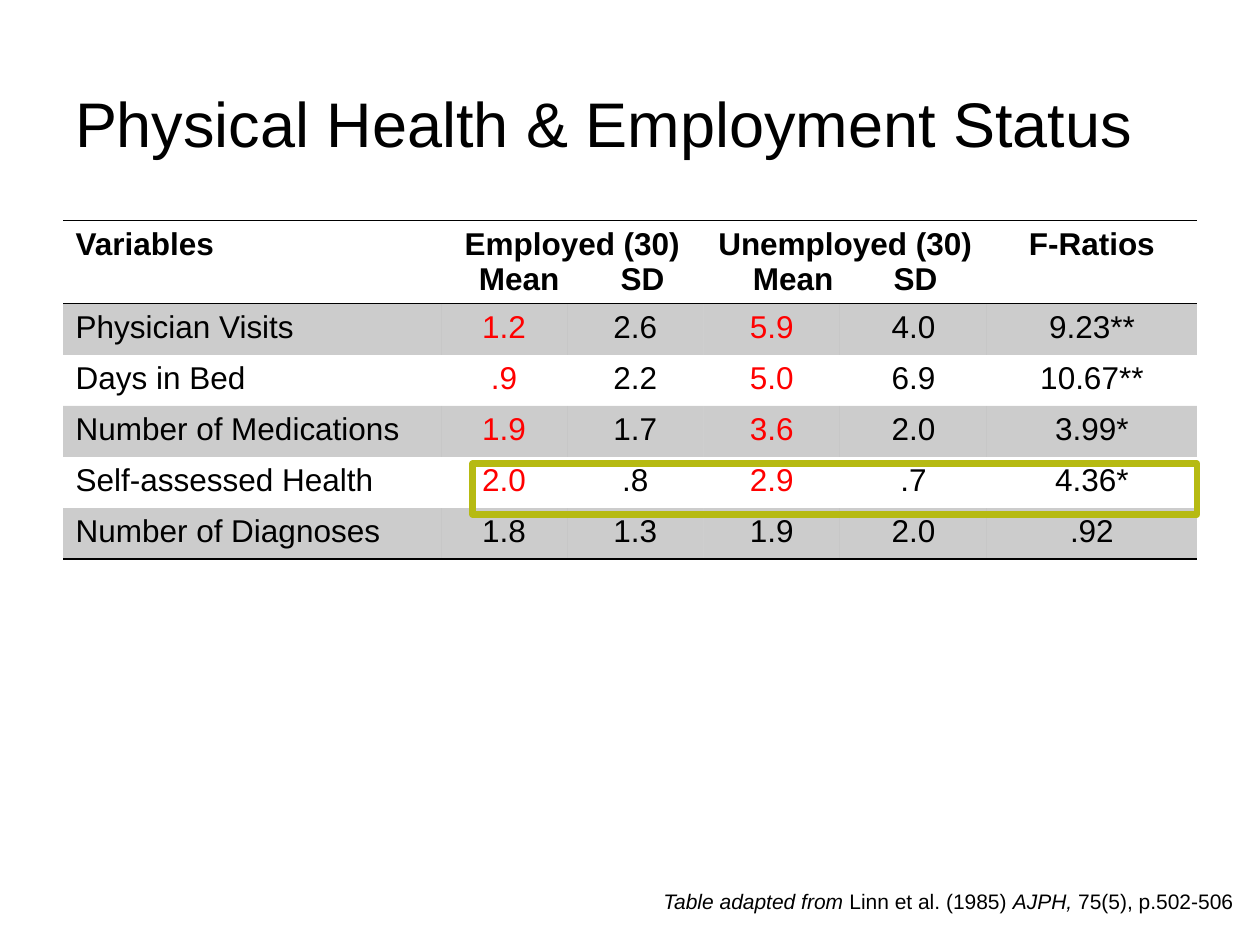
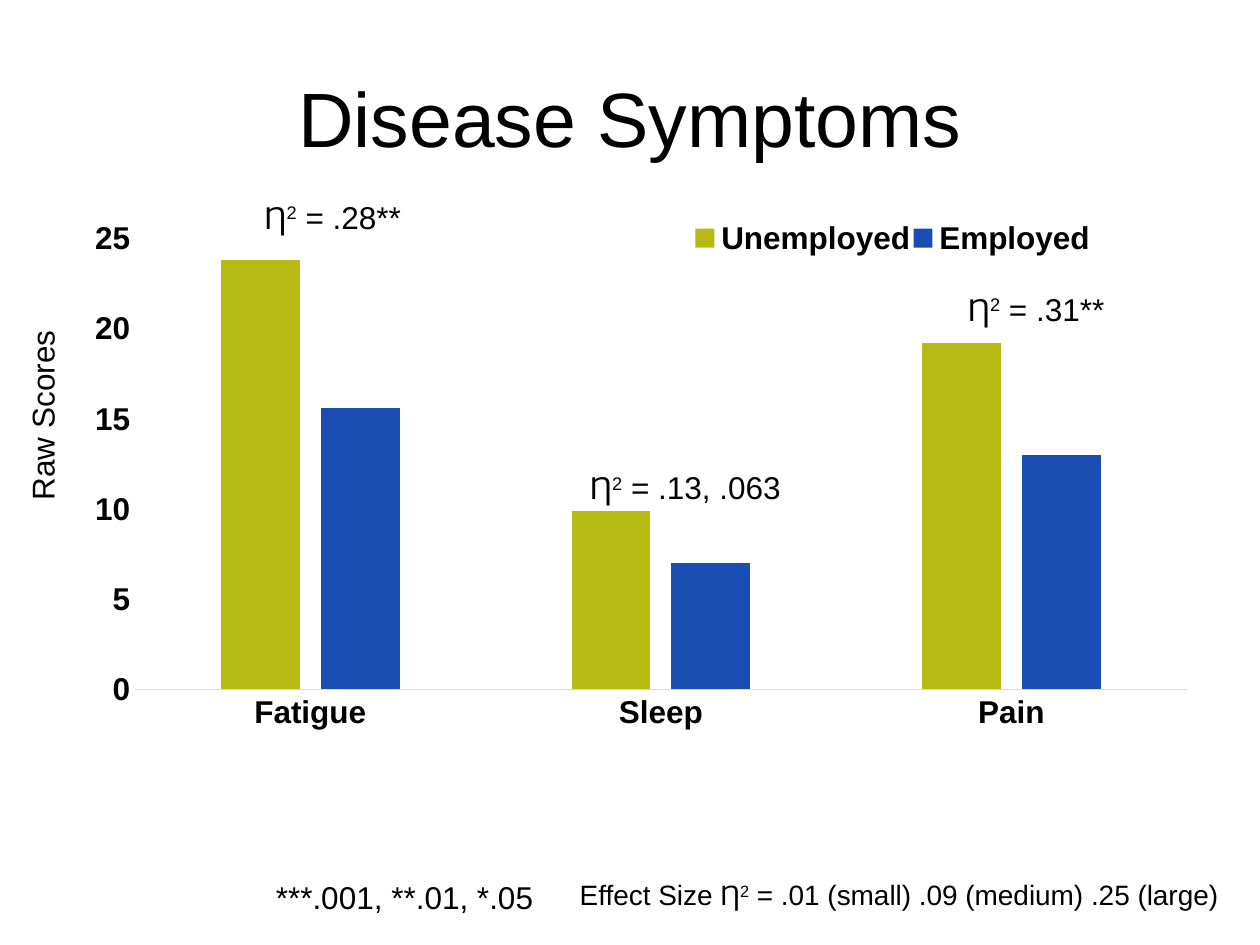
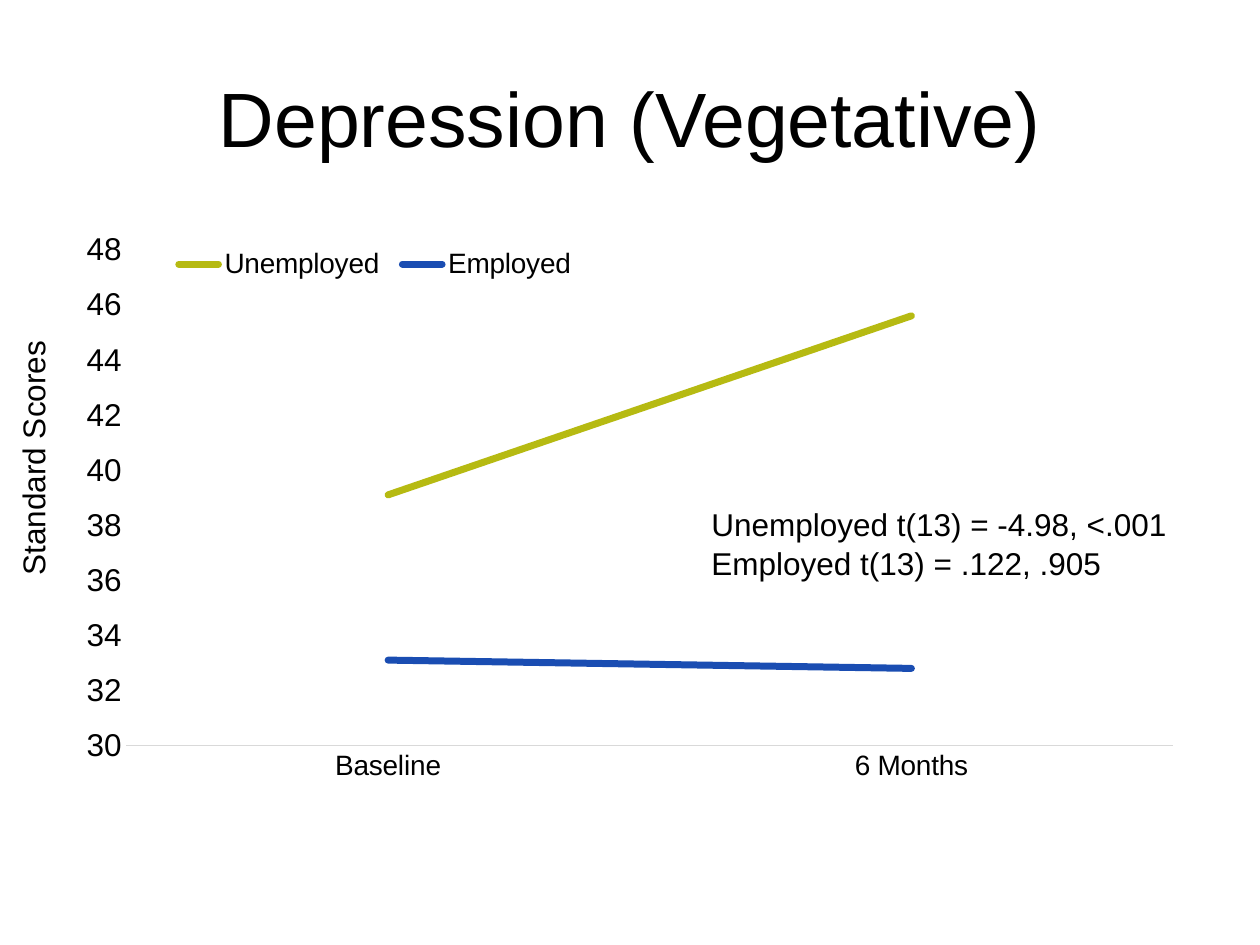
from lxml.etree import SubElement
from pptx import Presentation
from pptx.chart.data import CategoryChartData
from pptx.dml.color import RGBColor
from pptx.enum.chart import XL_CHART_TYPE, XL_LEGEND_POSITION, XL_TICK_MARK
from pptx.enum.shapes import MSO_SHAPE
from pptx.enum.text import MSO_ANCHOR, MSO_AUTO_SIZE, PP_ALIGN
from pptx.oxml.ns import qn
from pptx.util import Pt

FONT = "Arial"
BLACK, RED, OLIVE, BLUE, GREY = "000000", "FF0000", "B6BA12", "1A4DB2", "D9D9D9"
NO_GRID_STYLE = "{2D5ABB26-0587-4C30-8999-92F81FD0307C}"
TITLE_BOX = (36, 21.6, 648, 90)

COLUMNS = [216, 72, 78, 78, 84, 120]
HEADER_HEIGHT, ROW_HEIGHT = 47.5, 29.2
GROUPS = [(1, "Employed (30)", (37.5, 108)), (3, "Unemployed (30)", (44, 114))]
ROWS = [
    ["Physician Visits", "1.2", "2.6", "5.9", "4.0", "9.23**"],
    ["Days in Bed", ".9", "2.2", "5.0", "6.9", "10.67**"],
    ["Number of Medications", "1.9", "1.7", "3.6", "2.0", "3.99*"],
    ["Self-assessed Health", "2.0", ".8", "2.9", ".7", "4.36*"],
    ["Number of Diagnoses", "1.8", "1.3", "1.9", "2.0", ".92"],
]


def rgb(value):
    return RGBColor.from_string(value)


def set_font(font, size, color=BLACK, **extra):
    for name, value in {"name": FONT, "size": Pt(size), **extra}.items():
        setattr(font, name, value)
    font.color.rgb = rgb(color)


def add_runs(p, runs, size, color=BLACK, align=PP_ALIGN.LEFT, **extra):
    p.alignment = align
    for text, fmt in [(runs, {})] if isinstance(runs, str) else runs:
        fmt = {**extra, **fmt}
        raised = fmt.pop("raised", False)
        r = p.add_run()
        r.text = text
        set_font(r.font, size, color, **fmt)
        if raised:
            r._r.get_or_add_rPr().set("baseline", "30000")


def add_text(slide, box, paragraphs, size=18, align=PP_ALIGN.LEFT, gap=0,
             vertical=False, **frame):
    sp = slide.shapes.add_textbox(*map(Pt, box))
    tf = sp.text_frame
    settings = {"word_wrap": True, "auto_size": MSO_AUTO_SIZE.SHAPE_TO_FIT_TEXT, **frame}
    for name, value in settings.items():
        setattr(tf, name, value)
    if vertical:
        tf._txBody.bodyPr.set("vert", "vert270")
    for i, runs in enumerate(paragraphs):
        p = tf.add_paragraph() if i else tf.paragraphs[0]
        if i and gap:
            p.space_before = Pt(gap)
        add_runs(p, runs, size, align=align)


def add_title(slide, text, size=44, shift=(0, 0)):
    x, y, w, h = TITLE_BOX
    add_text(slide, (x + shift[0], y + shift[1], w, h), [text], size, PP_ALIGN.CENTER,
             auto_size=MSO_AUTO_SIZE.NONE, vertical_anchor=MSO_ANCHOR.MIDDLE)


def add_axis_name(slide, box, text):
    add_text(slide, box, [text], vertical=True, vertical_anchor=MSO_ANCHOR.MIDDLE)


def eta(value, before=""):
    return [(before + "Ƞ", {}), ("2", {"raised": True}), (f" = {value}", {})]


def add_border(cell, side):
    ln = SubElement(cell._tc.get_or_add_tcPr(), qn(f"a:ln{side}"), w=str(Pt(1)))
    SubElement(SubElement(ln, qn("a:solidFill")), qn("a:srgbClr"), val=BLACK)


def shade(cell):
    cell.fill.solid()
    cell.fill.fore_color.rgb = rgb(BLACK)
    color = cell._tc.tcPr.find(f"{qn('a:solidFill')}/{qn('a:srgbClr')}")
    SubElement(color, qn("a:alpha"), val="20000")


def add_centre_tabs(p, stops):
    tabs = SubElement(p._p.get_or_add_pPr(), qn("a:tabLst"))
    for stop in stops:
        SubElement(tabs, qn("a:tab"), pos=str(Pt(stop)), algn="ctr")


def add_header(tbl):
    for col, text in [(0, "Variables"), (5, "F-Ratios")]:
        align = PP_ALIGN.CENTER if col else PP_ALIGN.LEFT
        add_runs(tbl.cell(0, col).text_frame.paragraphs[0], text, 18, align=align, bold=True)
    for col, text, stops in GROUPS:
        cell = tbl.cell(0, col)
        cell.merge(tbl.cell(0, col + 1))
        tf = cell.text_frame
        add_runs(tf.paragraphs[0], text, 18, align=PP_ALIGN.CENTER, bold=True)
        p = tf.add_paragraph()
        add_centre_tabs(p, stops)
        add_runs(p, "\tMean\tSD", 18, bold=True)


def add_health_table(slide, x, y):
    height = HEADER_HEIGHT + ROW_HEIGHT * len(ROWS)
    frame = slide.shapes.add_table(len(ROWS) + 1, len(COLUMNS),
                                   *map(Pt, (x, y, sum(COLUMNS), height)))
    tbl = frame.table
    tbl.first_row = tbl.horz_banding = False
    tbl._tbl.tblPr.find(qn("a:tableStyleId")).text = NO_GRID_STYLE
    for column, width in zip(tbl.columns, COLUMNS):
        column.width = Pt(width)
    for i, row in enumerate(tbl.rows):
        row.height = Pt(ROW_HEIGHT if i else HEADER_HEIGHT)
        for cell in row.cells:
            if i == 0:
                add_border(cell, "T")
            if i in (0, len(ROWS)):
                add_border(cell, "B")
            if i % 2:
                shade(cell)
            else:
                cell.fill.background()
    add_header(tbl)
    for i, values in enumerate(ROWS, 1):
        for j, text in enumerate(values):
            color = RED if j in (1, 3) and i < len(ROWS) else BLACK
            align = PP_ALIGN.CENTER if j else PP_ALIGN.LEFT
            add_runs(tbl.cell(i, j).text_frame.paragraphs[0], text, 18, color, align)


def add_highlight(slide, box):
    sp = slide.shapes.add_shape(MSO_SHAPE.RECTANGLE, *map(Pt, box))
    sp.shadow.inherit = False
    sp.fill.background()
    sp.line.color.rgb = rgb(OLIVE)
    sp.line.width = Pt(3.75)


def set_layout(parent, place, inner=False):
    layout = parent.find(qn("c:layout"))
    if layout is None:
        layout = SubElement(parent, qn("c:layout"))
        parent.remove(layout)
        parent.insert(1 if parent.tag == qn("c:legend") else 0, layout)
    manual = SubElement(layout, qn("c:manualLayout"))
    if inner:
        SubElement(manual, qn("c:layoutTarget"), val="inner")
    for name in ("xMode", "yMode"):
        SubElement(manual, qn(f"c:{name}"), val="edge")
    for name, value in zip("xywh", place):
        SubElement(manual, qn(f"c:{name}"), val=str(value))


def add_score_chart(slide, box, kind, categories, series, scale, plot_at, legend_at,
                    small_size=18, bold=False):
    data = CategoryChartData()
    data.categories = categories
    for name, values in series:
        data.add_series(name, values)
    chart = slide.shapes.add_chart(kind, *map(Pt, box), data).chart
    chart.has_title = False
    set_font(chart.font, 18, bold=bold)
    chart.has_legend = True
    chart.legend.position = XL_LEGEND_POSITION.BOTTOM
    chart.legend.include_in_layout = False
    set_font(chart.legend.font, small_size, bold=bold)
    set_layout(chart.legend._element, legend_at)
    set_layout(chart._chartSpace.chart.plotArea, plot_at, inner=True)

    for axis, size in [(chart.category_axis, small_size), (chart.value_axis, 18)]:
        axis.has_major_gridlines = False
        axis.major_tick_mark = axis.minor_tick_mark = XL_TICK_MARK.NONE
        set_font(axis.tick_labels.font, size, bold=bold)
    chart.category_axis.format.line.color.rgb = rgb(GREY)
    chart.category_axis.format.line.width = Pt(0.75)
    axis = chart.value_axis
    axis.format.line.fill.background()
    axis.minimum_scale, axis.maximum_scale, axis.major_unit = scale
    chart.plots[0].vary_by_categories = False
    return chart


def build_table_slide(slide):
    add_title(slide, "Physical Health & Employment Status", 36, (-15, 3))
    add_health_table(slide, 36, 126)
    add_text(slide, (372, 504, 343, 21.6), [[
        ("Table adapted from ", {"italic": True}), ("Linn et al. (1985) ", {}),
        ("AJPH, ", {"italic": True}), ("75(5), p.502-506", {})]], 12, word_wrap=False)
    add_highlight(slide, (270, 265, 414, 29))


def build_symptom_slide(slide):
    add_title(slide, "Disease Symptoms")
    chart = add_score_chart(
        slide, (36, 122.4, 654, 342), XL_CHART_TYPE.COLUMN_CLUSTERED,
        ["Fatigue", "Sleep", "Pain"],
        [("Unemployed", (23.8, 9.9, 19.2)), ("Employed", (15.6, 7, 13))],
        (0, 25, 5), (0.063, 0.041, 0.919, 0.753), (0.55, 0.01, 0.35, 0.06), bold=True)
    plot = chart.plots[0]
    plot.gap_width, plot.overlap = 219, -27
    for s, color in zip(plot.series, (OLIVE, BLUE)):
        s.format.fill.solid()
        s.format.fill.fore_color.rgb = rgb(color)
    add_axis_name(slide, (6, 168, 36, 125), "Raw Scores")
    for x, y, w, value in [(144, 109.5, 96, ".28**"), (546, 162, 102, ".31**"),
                           (330, 264, 126, ".13, .063")]:
        add_text(slide, (x, y, w, 29), [eta(value)])
    add_text(slide, (258, 498, 445.5, 26.6),
             [eta(".01 (small) .09 (medium) .25 (large)", "Effect Size ")], 16, PP_ALIGN.RIGHT)
    add_text(slide, (150.5, 498, 168, 30), ["***.001, **.01, *.05"])


def build_depression_slide(slide):
    add_title(slide, "Depression (Vegetative)")
    chart = add_score_chart(
        slide, (36, 126, 648, 356.4), XL_CHART_TYPE.LINE, ["Baseline", "6 Months"],
        [("Unemployed", (39.1, 45.6)), ("Employed", (33.1, 32.8))],
        (30, 48, 2), (0.056, 0.047, 0.923, 0.795), (0.09, 0.04, 0.37, 0.06), small_size=16)
    for s, color in zip(chart.plots[0].series, (OLIVE, BLUE)):
        s.smooth = False
        s.format.line.color.rgb = rgb(color)
        s.format.line.width = Pt(4)
        s._element.find(f"{qn('c:spPr')}/{qn('a:ln')}").set("cap", "rnd")
    add_axis_name(slide, (0.7, 174, 36, 162), "Standard Scores")
    add_text(slide, (399.5, 285, 282, 51),
             ["Unemployed t(13) = -4.98, <.001", "Employed t(13) = .122, .905"], gap=1)


def main():
    prs = Presentation()
    prs.slide_width, prs.slide_height = Pt(720), Pt(540)
    for build in (build_table_slide, build_symptom_slide, build_depression_slide):
        build(prs.slides.add_slide(prs.slide_layouts[6]))
    prs.save("out.pptx")


if __name__ == "__main__":
    main()
